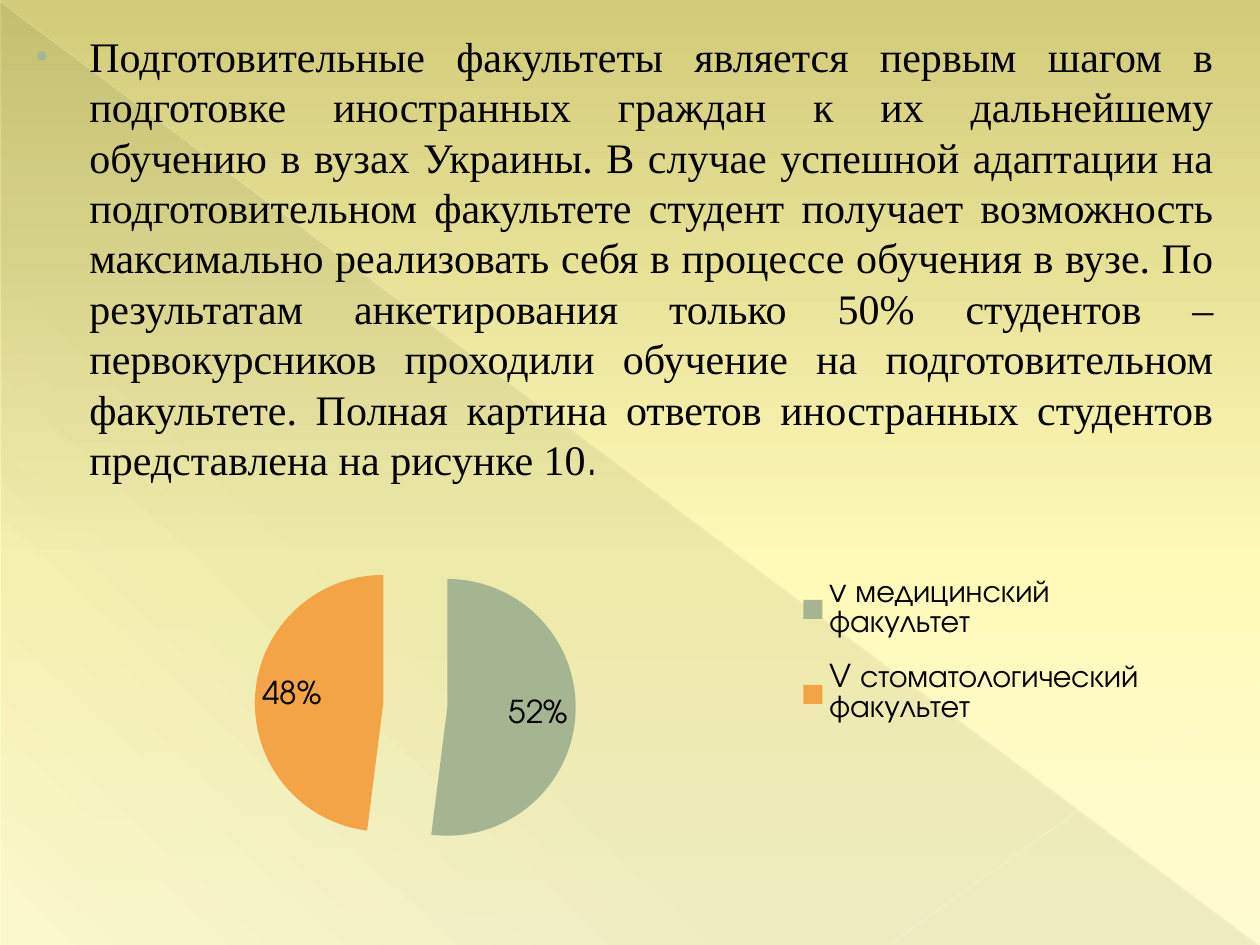
from lxml import etree
from pptx import Presentation
from pptx import util as u
from pptx.chart.data import CategoryChartData
from pptx.dml.color import RGBColor
from pptx.enum import chart as ch, shapes, text
from pptx.oxml import parse_xml
from pptx.oxml.ns import qn

KHAKI = RGBColor(0xD2, 0xCB, 0x79)
LEMON = RGBColor(0xFF, 0xFA, 0xB8)
CREAM = RGBColor(0xFF, 0xFB, 0xD1)
MOSS = RGBColor(0x44, 0x4D, 0x26)
PALE = RGBColor(0xFF, 0xFD, 0xE3)
SAGE = RGBColor(0xA5, 0xB5, 0x92)
AMBER = RGBColor(0xF3, 0xA4, 0x47)
BLACK = RGBColor(0, 0, 0)
SERIF, SANS = "Times New Roman", "TeX Gyre Adventor"
BODY = (
    "Подготовительные факультеты является первым шагом в подготовке "
    "иностранных граждан к их дальнейшему обучению в вузах Украины. "
    "В случае успешной адаптации на подготовительном факультете студент "
    "получает возможность максимально реализовать себя в процессе обучения "
    "в вузе. По результатам анкетирования только 50% студентов – "
    "первокурсников проходили обучение на подготовительном факультете. "
    "Полная картина ответов иностранных студентов представлена на рисунке 10"
)


def blend(fill, root, stops, angle):
    """Fill with stops of (percent, colour, opacity percent)."""
    fill.gradient()
    grad = next(root.iter(qn("a:gradFill")))
    rows = grad.find(qn("a:gsLst"))
    for old in list(rows):
        rows.remove(old)
    for pos, tint, solid in stops:
        stop = etree.SubElement(rows, qn("a:gs"), pos=str(pos * 1000))
        clr = etree.SubElement(stop, qn("a:srgbClr"), val=str(tint))
        etree.SubElement(clr, qn("a:alpha"), val=str(solid * 1000))
    grad.find(qn("a:lin")).set("ang", str(angle * 60000))


def layout(parent, spot, inner=False):
    """Place a chart part by fractions of the chart area."""
    for old in parent.findall(qn("c:layout")):
        parent.remove(old)
    lay = etree.Element(qn("c:layout"))
    man = etree.SubElement(lay, qn("c:manualLayout"))
    vals = [("layoutTarget", "inner")] if inner else []
    vals += [("xMode", "edge"), ("yMode", "edge"), *zip("xywh", spot)]
    for tag, val in vals:
        etree.SubElement(man, qn("c:" + tag), val=str(val))
    return lay


prs = Presentation()
prs.slide_width, prs.slide_height = u.Inches(10), u.Inches(7.5)
slide = prs.slides.add_slide(prs.slide_layouts[6])

# Background and shaded corner
back = slide.background
blend(back.fill, slide.element,
      [(0, KHAKI, 100), (60, LEMON, 100), (100, CREAM, 100)], 90)
wedge = slide.shapes.add_shape(
    shapes.MSO_SHAPE.RIGHT_TRIANGLE,
    *map(u.Inches, (0.01, 0.02, 9.98, 7.48)))
wedge.shadow.inherit = False
wedge.line.fill.background()
blend(wedge.fill, wedge.element,
      [(0, MOSS, 10), (70, MOSS, 8), (100, MOSS, 1)], 133)

# Faint diagonal lines
for ends, width, solid in [((0, 0.01, 9.99, 7.49), 0.39, 35),
                           ((10, 5.41, 7.07, 7.49), 0.47, 45)]:
    line = slide.shapes.add_connector(
        shapes.MSO_CONNECTOR.STRAIGHT, *map(u.Inches, ends))
    line.line.width = u.Pt(width)
    line.line.color.rgb = PALE
    clr = next(line.element.iter(qn("a:srgbClr")))
    etree.SubElement(clr, qn("a:alpha"), val=str(solid * 1000))
    etree.SubElement(line.element.spPr, qn("a:effectLst"))

# Bulleted paragraph
box = slide.shapes.add_textbox(*map(u.Inches, (0.12, 0.17, 9.61, 3.9)))
frame = box.text_frame
frame.word_wrap = True
frame.margin_top = u.Inches(0.07)
para = frame.paragraphs[0]
para.alignment = text.PP_ALIGN.JUSTIFY
para.line_spacing = u.Pt(28.8)
props = para._p.get_or_add_pPr()
props.set("marL", str(u.Inches(0.49)))
props.set("indent", str(u.Inches(-0.42)))
clr = etree.SubElement(etree.SubElement(props, qn("a:buClr")), qn("a:srgbClr"))
clr.set("val", str(SAGE))
etree.SubElement(props, qn("a:buSzPct"), val="80000")
etree.SubElement(props, qn("a:buFont"), typeface="Arial")
etree.SubElement(props, qn("a:buChar"), char="•")
for words, face in [(BODY, SERIF), (".", SANS)]:
    run = para.add_run()
    run.text = words
    for key, val in {"name": face, "size": u.Pt(24)}.items():
        setattr(run.font, key, val)
    run.font.color.rgb = BLACK

# Pie chart
data = CategoryChartData()
data.categories = ["v медицинский факультет", "V стоматологический факультет"]
data.add_series("Series 1", (52, 48))
pie = slide.shapes.add_chart(
    ch.XL_CHART_TYPE.PIE, *map(u.Inches, (0.43, 3.36, 8.82, 3.86)), data).chart
pie.has_title = False
pie.font.size, pie.font.name = u.Pt(18), SANS
pie.font.color.rgb = BLACK
plot = pie.plots[0]
plot.vary_by_categories = True
ser = plot.series[0]
for num, tint in enumerate((SAGE, AMBER)):
    part = ser.points[num].format
    part.fill.solid()
    part.fill.fore_color.rgb = tint
    part.line.fill.background()
burst = etree.Element(qn("c:explosion"), val="25")
ser._element.find(qn("c:dPt")).addprevious(burst)

# Percent labels
plot.has_data_labels = True
labels = {"show_percentage": True, "show_value": False,
          "number_format": "0%", "number_format_is_linked": False,
          "position": ch.XL_LABEL_POSITION.INSIDE_END}
for key, val in labels.items():
    setattr(plot.data_labels, key, val)

# Legend and plot positions
pie.has_legend = True
key = pie.legend
key.position = ch.XL_LEGEND_POSITION.RIGHT
key.include_in_layout = False
spot = layout(key._element, (0.66, 0.27, 0.33, 0.4))
key._element.find(qn("c:legendPos")).addnext(spot)
area = next(pie._chartSpace.iter(qn("c:plotArea")))
area.insert(0, layout(area, (0.05, 0.25, 0.55, 0.66), inner=True))

prs.save("out.pptx")
